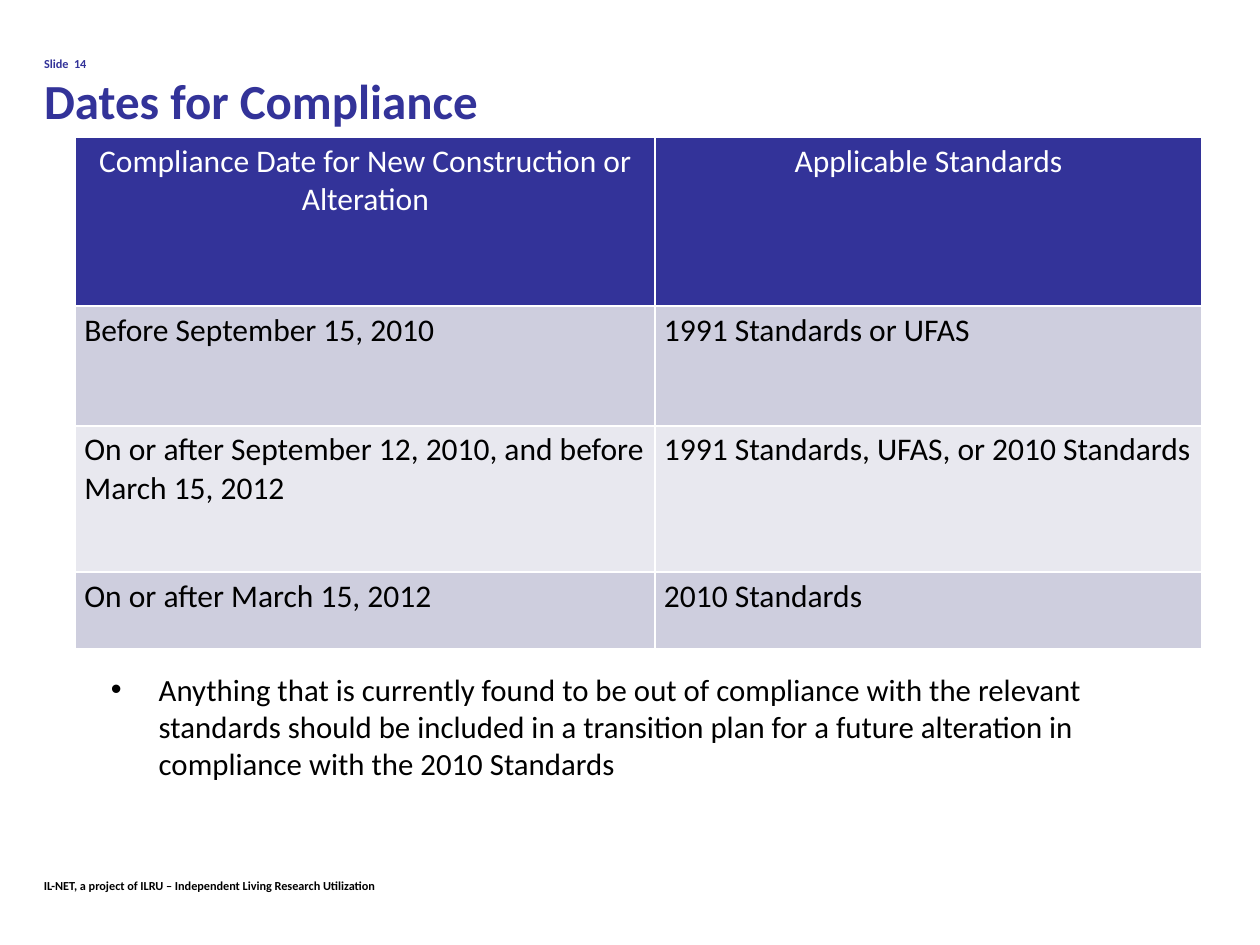
from lxml import etree
from pptx import Presentation
from pptx.dml.color import RGBColor
from pptx.enum.text import MSO_ANCHOR as ANCHOR, MSO_AUTO_SIZE as AUTO, PP_ALIGN as ALIGN
from pptx.oxml.ns import qn
from pptx.util import Inches, Pt

NAVY = RGBColor(0x33, 0x33, 0x99)
LILAC = RGBColor(0xCE, 0xCE, 0xDE)
PALE = RGBColor(0xE8, 0xE8, 0xEF)
BLACK = RGBColor(0, 0, 0)
WHITE = RGBColor(0xFF, 0xFF, 0xFF)

COLUMNS = [4.6, 4.34]
ROW_HEIGHTS = [1.34, 0.95, 1.16, 0.61]
ROWS = [
    ("Compliance Date for New Construction or Alteration", "Applicable Standards"),
    ("Before September 15, 2010", "1991 Standards or UFAS"),
    ("On or after September 12, 2010, and before March 15, 2012",
     "1991 Standards, UFAS, or 2010 Standards"),
    ("On or after March 15, 2012", "2010 Standards"),
]


def add_text(p, text, size=18, color=BLACK, bold=False, font="Calibri", align=ALIGN.LEFT):
    p.alignment = align
    r = p.add_run()
    r.text = text
    r.font.name = font
    r.font.size = Pt(size)
    r.font.bold = bold
    r.font.color.rgb = color


def add_bullet(p, indent):
    """Give the paragraph a round bullet with a hanging indent in inches."""
    pPr = p._p.get_or_add_pPr()
    pPr.set("marL", str(Inches(indent)))
    pPr.set("indent", str(-Inches(indent)))
    etree.SubElement(pPr, qn("a:buFont"), typeface="Arial")
    etree.SubElement(pPr, qn("a:buChar"), char="•")


def add_borders(cell, color=WHITE, width=1):
    tcPr = cell._tc.get_or_add_tcPr()
    for side in ("lnL", "lnR", "lnT", "lnB"):
        ln = etree.SubElement(tcPr, qn(f"a:{side}"), w=str(Pt(width)))
        fill = etree.SubElement(ln, qn("a:solidFill"))
        etree.SubElement(fill, qn("a:srgbClr"), val=str(color))


class SlideBuilder:
    """Holds the current slide and its style."""

    def __init__(self, prs):
        self.s = prs.slides.add_slide(prs.slide_layouts[5])

    def title(self, label, text, x, y, w, h):
        sp = self.s.shapes.title
        sp.left, sp.top, sp.width, sp.height = map(Inches, (x, y, w, h))
        tf = sp.text_frame
        tf.auto_size = AUTO.NONE
        tf.vertical_anchor = ANCHOR.MIDDLE
        p = tf.paragraphs[0]
        add_text(p, label, size=7, color=NAVY, bold=True)
        p.add_line_break()
        add_text(p, text, size=28, color=NAVY, bold=True)

    def text(self, text, x, y, w, h, bullet_indent=None, margins=(0.1, 0.05), **style):
        tf = self.s.shapes.add_textbox(*map(Inches, (x, y, w, h))).text_frame
        tf.word_wrap = True
        tf.margin_left = tf.margin_right = Inches(margins[0])
        tf.margin_top = tf.margin_bottom = Inches(margins[1])
        p = tf.paragraphs[0]
        if bullet_indent:
            add_bullet(p, bullet_indent)
        add_text(p, text, **style)

    def table(self, rows, x, y, widths, heights):
        size = map(Inches, (x, y, sum(widths), sum(heights)))
        table = self.s.shapes.add_table(len(rows), len(widths), *size).table
        for column, width in zip(table.columns, widths):
            column.width = Inches(width)
        for i, (row, height) in enumerate(zip(rows, heights)):
            table.rows[i].height = Inches(height)
            for j, text in enumerate(row):
                self.cell(table.cell(i, j), text, i)

    def cell(self, cell, text, row):
        header = row == 0
        add_borders(cell)
        cell.fill.solid()
        cell.fill.fore_color.rgb = NAVY if header else LILAC if row % 2 else PALE
        cell.margin_left = cell.margin_right = Inches(0.07)
        cell.margin_top = cell.margin_bottom = Inches(0.04)
        add_text(cell.text_frame.paragraphs[0], text,
                 color=WHITE if header else BLACK,
                 align=ALIGN.CENTER if header else ALIGN.LEFT)


def main():
    prs = Presentation()
    prs.slide_width, prs.slide_height = Inches(10), Inches(7.5)
    slide = SlideBuilder(prs)
    slide.text("IL-NET, a project of ILRU – Independent Living Research Utilization",
               0.25, 6.92, 5, 0.22, size=7, bold=True)
    slide.title("Slide  14", "Dates for Compliance", 0.25, 0.3, 8.42, 0.87)
    slide.table(ROWS, 0.6, 1.09, COLUMNS, ROW_HEIGHTS)
    slide.text("Anything that is currently found to be out of compliance with the relevant "
               "standards should be included in a transition plan for a future alteration "
               "in compliance with the 2010 Standards",
               0.88, 5.28, 8.25, 0.92, bullet_indent=0.38, margins=(0, 0.04), size=17.6)
    prs.save("out.pptx")


if __name__ == "__main__":
    main()
